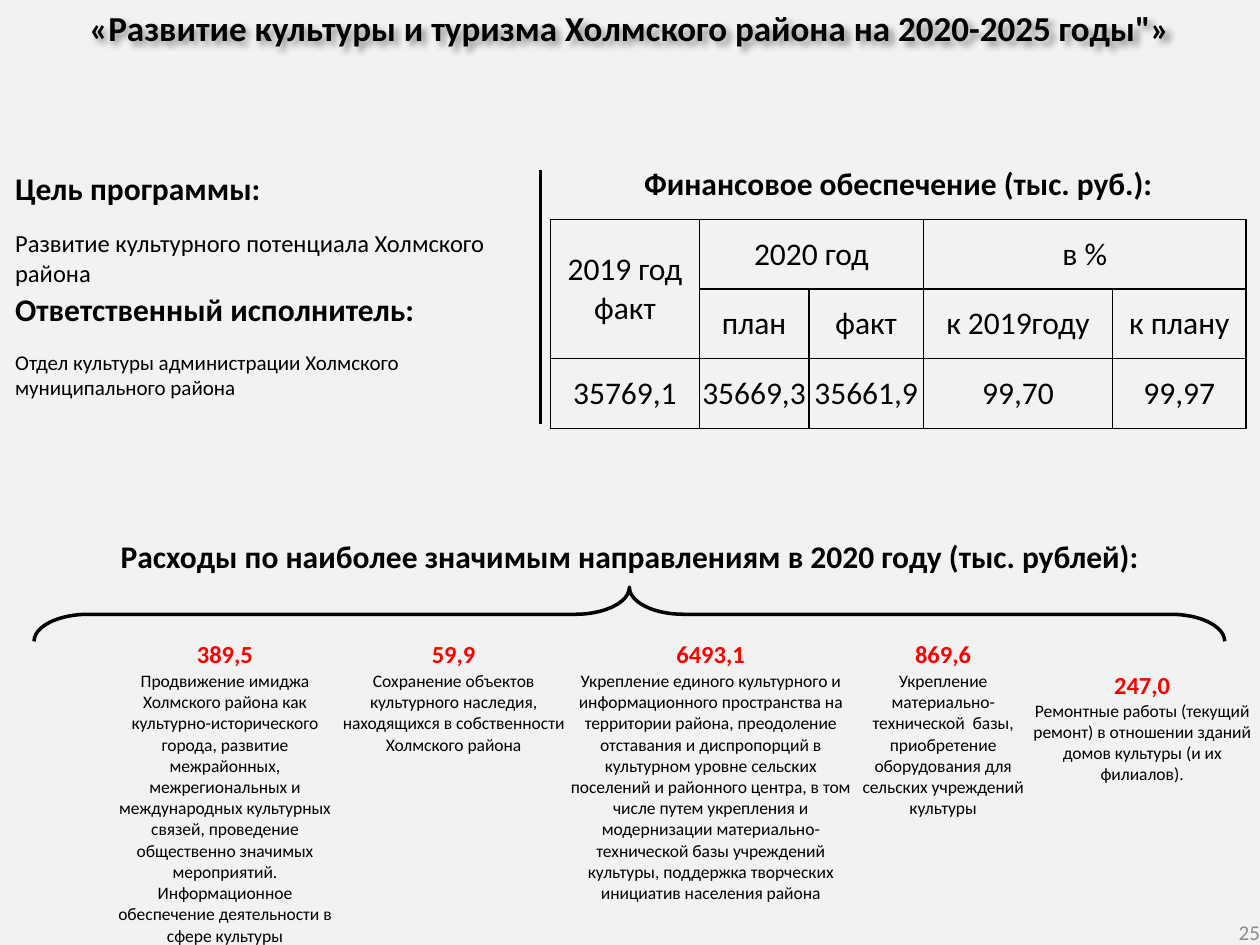
import pptx
import pptx.util
import pptx.dml.color
import pptx.enum.shapes
import pptx.enum.text
import pptx.oxml
import pptx.oxml.ns

Inches = pptx.util.Inches
Align = pptx.enum.text.PP_ALIGN
Anchor = pptx.enum.text.MSO_ANCHOR

COLORS = {"page": "F2F2F2", "ink": "000000", "amount": "FF0000", "number": "8C8C8C"}
FONT = "Calibri"

TITLE = "«Развитие культуры и туризма Холмского района на 2020-2025 годы\"»"
SPENDING_HEADING = "Расходы по наиболее значимым направлениям в 2020 году (тыс. рублей):"
PAGE_NUMBER = "25"

GOALS = [
    ("Цель программы:", 18, True, 0.47),
    ("Развитие культурного потенциала Холмского района", 14, False, 0.49),
    ("Ответственный исполнитель:", 18, True, 0.47),
    ("Отдел культуры администрации Холмского муниципального района", 12, False, 0.59),
]

FINANCE = [
    ["Финансовое обеспечение (тыс. руб.):", None, None, None, None],
    ["2019 год факт", "2020 год", None, "в %", None],
    [None, "план", "факт", "к 2019году", "к плану"],
    ["35769,1", "35669,3", "35661,9", "99,70", "99,97"],
]
FINANCE_MERGES = [((0, 0), (0, 4)), ((1, 0), (2, 0)), ((1, 1), (1, 2)), ((1, 3), (1, 4))]
FINANCE_WIDTHS = [1.18, 0.87, 0.91, 1.5, 1.06]
FINANCE_HEIGHT = 2.21

SPENDING = [
    ("389,5", "Продвижение имиджа Холмского района как культурно-исторического города, "
     "развитие межрайонных, межрегиональных и международных культурных связей, "
     "проведение общественно значимых мероприятий. Информационное обеспечение "
     "деятельности в сфере культуры", 1.83),
    ("59,9", "Сохранение объектов культурного наследия, находящихся в собственности "
     "Холмского района", 1.8),
    ("6493,1", "Укрепление единого культурного и информационного пространства на "
     "территории района, преодоление отставания и диспропорций в культурном уровне "
     "сельских поселений и районного центра, в том числе путем укрепления и "
     "модернизации материально-технической базы учреждений культуры, поддержка "
     "творческих инициатив населения района", 2.28),
    ("869,6", "Укрепление материально-технической  базы, приобретение оборудования "
     "для сельских учреждений культуры", 1.41),
    ("247,0", "Ремонтные работы (текущий ремонт) в отношении зданий домов культуры "
     "(и их филиалов).", 1.75),
]

AMOUNT = {"size": 14, "bold": True, "color": "amount"}
PURPOSE = {"size": 10}
TIGHT = (0.01, 0.01, 0.01, 0)


def rgb(name):
    """Return a palette colour."""
    return pptx.dml.color.RGBColor.from_string(COLORS[name])


def write(para, text, size=18, bold=False, color="ink", align=Align.CENTER):
    """Add formatted text to a paragraph."""
    para.alignment = align
    span = para.add_run()
    span.text = text
    span.font.name = FONT
    span.font.size = pptx.util.Pt(size)
    span.font.bold = bold
    span.font.color.rgb = rgb(color)


def set_frame(target, insets, anchor):
    """Set the insets and vertical anchor of a cell or a text frame."""
    target.margin_left, target.margin_top, target.margin_right, target.margin_bottom = map(Inches, insets)
    target.vertical_anchor = anchor


def add_label(page, place, text, insets=(0.1, 0.05, 0.1, 0.05), **style):
    """Add a one-paragraph text box."""
    frame = page.shapes.add_textbox(*map(Inches, place)).text_frame
    frame.word_wrap = True
    set_frame(frame, insets, Anchor.MIDDLE)
    write(frame.paragraphs[0], text, **style)


def set_borders(cell, sides="", width=1):
    """Draw the named sides of a cell and clear the others."""
    properties = cell._tc.get_or_add_tcPr()
    for index, side in enumerate("LRTB"):
        paint = "<a:noFill/>"
        if side in sides:
            paint = f'<a:solidFill><a:srgbClr val="{COLORS["ink"]}"/></a:solidFill>'
        properties.insert(index, pptx.oxml.parse_xml(
            f'<a:ln{side} {pptx.oxml.ns.nsdecls("a")} w="{pptx.util.Pt(width)}">{paint}</a:ln{side}>'))


def add_grid(page, left, top, widths, heights):
    """Add a plain table with the given column widths and row heights."""
    grid = page.shapes.add_table(
        len(heights), len(widths), Inches(left), Inches(top),
        Inches(sum(widths)), Inches(sum(heights))).table
    grid.first_row = grid.horz_banding = False
    for column, width in zip(grid.columns, widths):
        column.width = Inches(width)
    for row, height in zip(grid.rows, heights):
        row.height = Inches(height)
    for cell in grid.iter_cells():
        cell.fill.background()
    return grid


def add_title(page):
    """Place the title and give it a soft shadow."""
    title = page.shapes.title
    title.left, title.top, title.width, title.height = map(Inches, (0, 0, 10, 0.71))
    title.text_frame.vertical_anchor = Anchor.TOP
    write(title.text_frame.paragraphs[0], TITLE, size=20, bold=True)
    title.fill.background()
    title._element.spPr.append(pptx.oxml.parse_xml(
        f'<a:effectLst {pptx.oxml.ns.nsdecls("a")}>'
        '<a:outerShdw blurRad="50800" dist="38100" dir="2700000" algn="tl" rotWithShape="0">'
        f'<a:srgbClr val="{COLORS["ink"]}"><a:alpha val="40000"/></a:srgbClr>'
        '</a:outerShdw></a:effectLst>'))


def add_goals(page):
    """Add the programme goal and the responsible body."""
    grid = add_grid(page, 0.12, 1.35, [4.17], [goal[3] for goal in GOALS])
    for cell, (text, size, bold, _) in zip(grid.iter_cells(), GOALS):
        set_frame(cell, (0, 0, 0, 0), Anchor.TOP)
        set_borders(cell, "R", 2.25)
        write(cell.text_frame.paragraphs[0], text, size=size, bold=bold, align=Align.LEFT)


def add_finance(page):
    """Add the financing table with its merged headings."""
    count = len(FINANCE)
    grid = add_grid(page, 4.37, 1.19, FINANCE_WIDTHS, [FINANCE_HEIGHT / count] * count)
    for first, last in FINANCE_MERGES:
        grid.cell(*first).merge(grid.cell(*last))
    for row, texts in enumerate(FINANCE):
        insets = TIGHT if row == count - 1 else (0.04,) * 4
        for column, text in enumerate(texts):
            cell = grid.cell(row, column)
            set_frame(cell, insets, Anchor.MIDDLE)
            set_borders(cell, "LRTB" if row else "B")
            if text:
                write(cell.text_frame.paragraphs[0], text, bold=row == 0)


def add_spending(page):
    """Add the amounts and purposes, the last amount standing above its purpose."""
    grid = add_grid(page, 0.87, 5.07, [item[2] for item in SPENDING], [0.23, 2.06])
    for cell in grid.iter_cells():
        set_borders(cell)
    for column, (amount, purpose, _) in enumerate(SPENDING):
        head, body = grid.cell(0, column), grid.cell(1, column)
        set_frame(head, TIGHT, Anchor.BOTTOM)
        set_frame(body, TIGHT, Anchor.TOP)
        head_para = head.text_frame.paragraphs[0]
        para = body.text_frame.paragraphs[0]
        if column < len(SPENDING) - 1:
            write(head_para, amount, **AMOUNT)
        else:
            head_para._p.append(pptx.oxml.parse_xml(
                f'<a:endParaRPr {pptx.oxml.ns.nsdecls("a")} sz="1000"/>'))
            write(para, amount, **AMOUNT)
            para = body.text_frame.add_paragraph()
        write(para, purpose, **PURPOSE)


def add_brace(page):
    """Add the brace that spans the spending columns."""
    brace = page.shapes.add_shape(
        pptx.enum.shapes.MSO_SHAPE.RIGHT_BRACE, *map(Inches, (4.78, 0.15, 0.43, 9.45)))
    brace.rotation = 270
    brace.adjustments[0], brace.adjustments[1] = 1, 0.5
    brace.shadow.inherit = False
    brace.fill.background()
    brace.line.color.rgb = rgb("ink")
    brace.line.width = pptx.util.Pt(2)


def main():
    """Build the programme slide."""
    deck = pptx.Presentation()
    deck.slide_width, deck.slide_height = Inches(10), Inches(7.5)
    page = deck.slides.add_slide(deck.slide_layouts.get_by_name("Title Only"))
    page.background.fill.solid()
    page.background.fill.fore_color.rgb = rgb("page")
    add_title(page)
    add_label(page, (0, 4.18, 10, 0.47), SPENDING_HEADING, bold=True)
    add_finance(page)
    add_brace(page)
    add_goals(page)
    add_spending(page)
    add_label(page, (7.67, 7.29, 2.33, 0.21), PAGE_NUMBER, insets=(0, 0, 0, 0),
              size=12, color="number", align=Align.RIGHT)
    deck.save("out.pptx")


if __name__ == "__main__":
    main()
